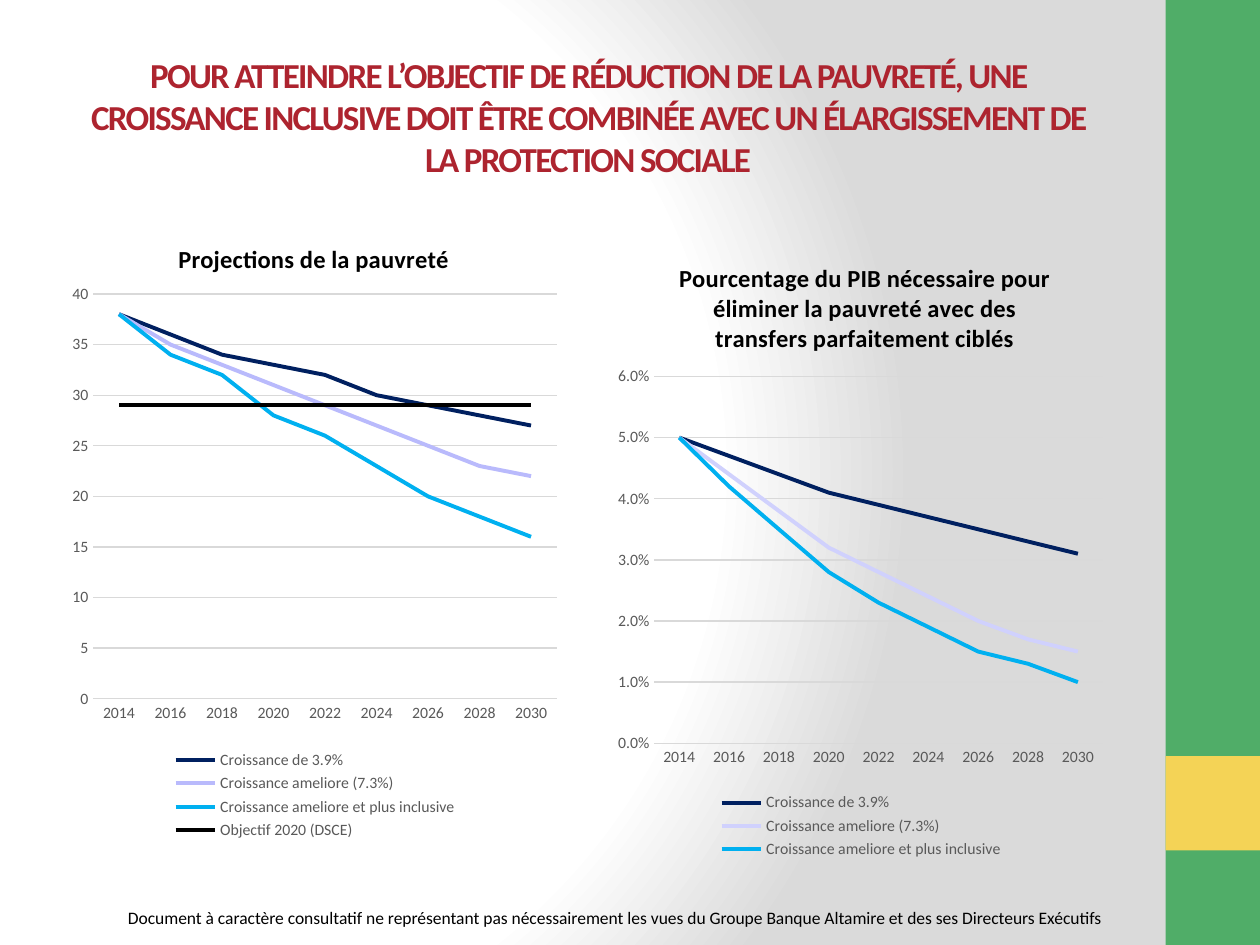
from dataclasses import dataclass

from pptx import Presentation
from pptx.chart.data import CategoryChartData
from pptx.dml.color import RGBColor
from pptx.enum.chart import XL_CHART_TYPE as ChartType
from pptx.enum.chart import XL_LEGEND_POSITION as LegendPosition
from pptx.enum.chart import XL_TICK_MARK as TickMark
from pptx.enum.shapes import MSO_SHAPE as ShapeType
from pptx.enum.text import MSO_ANCHOR as Anchor
from pptx.enum.text import PP_ALIGN as Align
from pptx.oxml import parse_xml
from pptx.oxml.ns import nsdecls, qn
from pptx.util import Pt

FONT = "Calibri"
BLACK, GREY, RULE = "000000", "595959", "D9D9D9"
NAVY, SKY = "002060", "00B0F0"
YEARS = [str(year) for year in range(2014, 2031, 2)]


@dataclass
class Box:
    left: float
    top: float
    width: float
    height: float

    def lengths(self) -> list:
        return [Pt(value) for value in (self.left, self.top, self.width, self.height)]


@dataclass
class Band:
    box: Box
    color: str


@dataclass
class Line:
    name: str
    color: str
    values: list[float]


@dataclass
class LineChart:
    box: Box
    title: str
    title_at: tuple[float, float]
    plot_at: tuple[float, float, float, float]
    maximum: float
    step: float
    number_format: str
    lines: list[Line]


BANDS = [
    Band(Box(666, 0, 54, 540), "50AD68"),
    Band(Box(666, 432, 54, 54), "F4D356"),
]

CHARTS = [
    LineChart(
        Box(348, 132, 288, 361.5),
        "Pourcentage du PIB nécessaire pour éliminer la pauvreté avec des transfers parfaitement ciblés",
        (0.13, 0.04), (0.09, 0.23, 0.89, 0.58), 0.06, 0.01, "0.0%",
        [
            Line("Croissance de 3.9%", NAVY,
                 [0.05, 0.047, 0.044, 0.041, 0.039, 0.037, 0.035, 0.033, 0.031]),
            Line("Croissance ameliore (7.3%)", "D0D1FD",
                 [0.05, 0.044, 0.038, 0.032, 0.028, 0.024, 0.02, 0.017, 0.015]),
            Line("Croissance ameliore et plus inclusive", SKY,
                 [0.05, 0.042, 0.035, 0.028, 0.023, 0.019, 0.015, 0.013, 0.01]),
        ],
    ),
    LineChart(
        Box(36, 121, 288, 361.5),
        "Projections de la pauvreté",
        (0.22, 0.04), (0.06, 0.13, 0.92, 0.64), 40, 5, "General",
        [
            Line("Croissance de 3.9%", NAVY, [38, 36, 34, 33, 32, 30, 29, 28, 27]),
            Line("Croissance ameliore (7.3%)", "B9BAFC", [38, 35, 33, 31, 29, 27, 25, 23, 22]),
            Line("Croissance ameliore et plus inclusive", SKY,
                 [38, 34, 32, 28, 26, 23, 20, 18, 16]),
            Line("Objectif 2020 (DSCE)", BLACK, [29] * len(YEARS)),
        ],
    ),
]


def rgb(color: str) -> RGBColor:
    return RGBColor.from_string(color)


def set_font(font, size: float, color: str, bold: bool = False) -> None:
    font.name = FONT
    font.size = Pt(size)
    font.bold = bold
    font.color.rgb = rgb(color)


def set_line(line, color: str, width: float) -> None:
    line.color.rgb = rgb(color)
    line.width = Pt(width)


def add_background(slide) -> None:
    stops = "".join(
        f'<a:gs pos="{position}000"><a:srgbClr val="{color}"/></a:gs>'
        for position, color in ((0, "FFFFFF"), (75, "FFFFFF"), (100, "DADADA"))
    )
    background = parse_xml(
        f'<p:bg {nsdecls("p", "a")}><p:bgPr><a:gradFill rotWithShape="1">'
        f'<a:gsLst>{stops}</a:gsLst><a:path path="circle">'
        '<a:fillToRect l="20000" t="50000" r="100000" b="50000"/></a:path>'
        "</a:gradFill><a:effectLst/></p:bgPr></p:bg>"
    )
    slide.element.find(qn("p:cSld")).insert(0, background)


def add_band(slide, band: Band) -> None:
    shape = slide.shapes.add_shape(ShapeType.RECTANGLE, *band.box.lengths())
    shape.shadow.inherit = False
    shape.fill.solid()
    shape.fill.fore_color.rgb = rgb(band.color)
    shape.line.fill.background()


def add_text(slide, box: Box, text: str, *, size: float, color: str, bold: bool = False,
             align=Align.LEFT, anchor=Anchor.TOP, spacing: float = 0) -> None:
    frame = slide.shapes.add_textbox(*box.lengths()).text_frame
    frame.word_wrap = True
    frame.vertical_anchor = anchor
    paragraph = frame.paragraphs[0]
    paragraph.alignment = align
    run = paragraph.add_run()
    run.text = text
    set_font(run.font, size, color, bold)
    if spacing:
        run.font._element.set("spc", str(int(spacing * 100)))


def set_layout(element, index: int, position: tuple, inner: bool = False) -> None:
    for layout in element.findall(qn("c:layout")):
        element.remove(layout)
    target = '<c:layoutTarget val="inner"/>' if inner else ""
    modes = '<c:xMode val="edge"/><c:yMode val="edge"/>'
    values = "".join(f'<c:{key} val="{value}"/>' for key, value in zip("xywh", position))
    element.insert(index, parse_xml(
        f'<c:layout {nsdecls("c")}><c:manualLayout>{target}{modes}{values}'
        "</c:manualLayout></c:layout>"
    ))


def add_line_chart(slide, spec_chart: LineChart) -> None:
    data = CategoryChartData(number_format=spec_chart.number_format)
    data.categories = YEARS
    for line in spec_chart.lines:
        data.add_series(line.name, line.values)
    chart = slide.shapes.add_chart(
        ChartType.LINE, *spec_chart.box.lengths(), data).chart
    set_font(chart.font, 10, BLACK)

    chart.has_title = True
    paragraph = chart.chart_title.text_frame.paragraphs[0]
    run = paragraph.add_run()
    run.text = spec_chart.title
    set_font(run.font, 14, BLACK, True)
    set_layout(chart.chart_title.element, 1, spec_chart.title_at)
    plot_area = chart.element.find(qn("c:chart")).find(qn("c:plotArea"))
    set_layout(plot_area, 0, spec_chart.plot_at, inner=True)

    chart.has_legend = True
    chart.legend.position = LegendPosition.BOTTOM
    chart.legend.include_in_layout = False
    set_font(chart.legend.font, 9, GREY)

    for axis in (chart.category_axis, chart.value_axis):
        axis.major_tick_mark = axis.minor_tick_mark = TickMark.NONE
        set_font(axis.tick_labels.font, 9, GREY)
    set_line(chart.category_axis.format.line, RULE, 0.75)
    values = chart.value_axis
    values.minimum_scale, values.maximum_scale = 0, spec_chart.maximum
    values.major_unit = spec_chart.step
    values.format.line.fill.background()
    values.has_major_gridlines = True
    set_line(values.major_gridlines.format.line, RULE, 0.75)
    values.tick_labels.number_format = spec_chart.number_format
    values.tick_labels.number_format_is_linked = False

    plot = chart.plots[0]
    plot.vary_by_categories = False
    for series, line in zip(plot.series, spec_chart.lines):
        series.smooth = False
        set_line(series.format.line, line.color, 2.25)


def main() -> None:
    presentation = Presentation()
    presentation.slide_width, presentation.slide_height = Pt(720), Pt(540)
    slide = presentation.slides.add_slide(presentation.slide_layouts[6])
    add_background(slide)
    for band in BANDS:
        add_band(slide, band)
    add_text(slide, Box(66, 515, 636, 19.5),
             "Document à caractère consultatif ne représentant pas nécessairement les vues "
             "du Groupe Banque Altamire et des ses Directeurs Exécutifs",
             size=10, color=BLACK)
    add_text(slide, Box(36, 21.6, 600, 90),
             "POUR ATTEINDRE L’OBJECTIF DE RÉDUCTION DE LA PAUVRETÉ, UNE CROISSANCE INCLUSIVE "
             "DOIT ÊTRE COMBINÉE AVEC UN ÉLARGISSEMENT DE LA PROTECTION SOCIALE",
             size=20, color="AD242F", bold=True, align=Align.CENTER,
             anchor=Anchor.MIDDLE, spacing=-1)
    for line_chart in CHARTS:
        add_line_chart(slide, line_chart)
    presentation.save("out.pptx")


if __name__ == "__main__":
    main()
